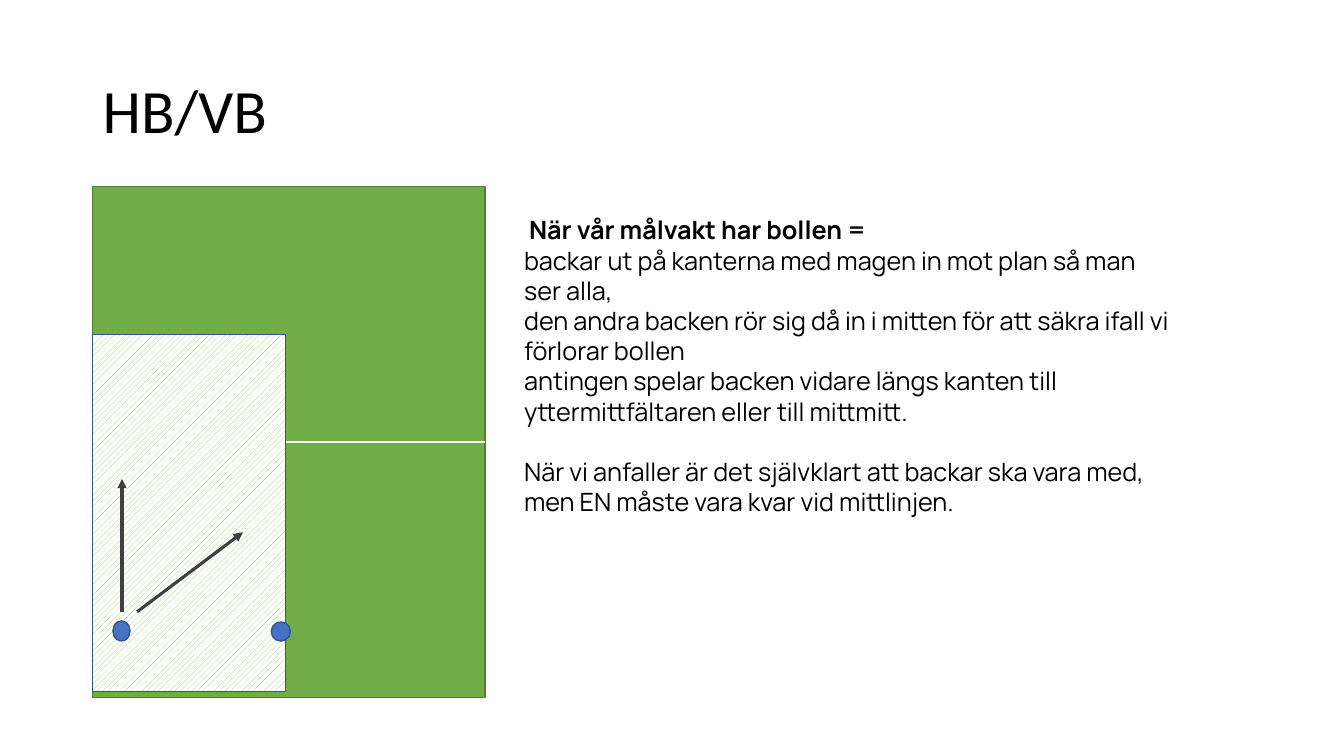
from dataclasses import dataclass

from lxml import etree
from pptx import Presentation
from pptx.dml.color import RGBColor
from pptx.enum import dml, shapes, text
from pptx.oxml import ns
from pptx.shapes.autoshape import Shape
from pptx.shapes.connector import Connector
from pptx.slide import Slide
from pptx.util import Inches, Pt


@dataclass(frozen=True)
class Theme:
    font_title: str = "Calibri"
    font_body: str = "Manrope"
    size_title: float = 44
    size_body: float = 18
    paragraph_gap: float = 21.6
    outline_width: float = 1
    halfway_width: float = 1.5
    arrow_width: float = 2.25
    ink: str = "000000"
    white: str = "FFFFFF"
    grass: str = "70AD47"
    grass_outline: str = "538035"
    hatch: str = "92D050"
    player: str = "4472C4"
    blue_outline: str = "325491"
    arrow: str = "404040"


@dataclass(frozen=True)
class Box:
    left: float
    top: float
    width: float
    height: float

    def lengths(self) -> tuple[Inches, Inches, Inches, Inches]:
        return Inches(self.left), Inches(self.top), Inches(self.width), Inches(self.height)


@dataclass(frozen=True)
class Run:
    start: tuple[float, float]
    end: tuple[float, float]


THEME = Theme()
RECTANGLE = shapes.MSO_SHAPE.RECTANGLE
OVAL = shapes.MSO_SHAPE.OVAL

TITLE_BOX = Box(0.92, 0.4, 11.5, 1.45)
BODY_BOX = Box(5.1, 2.08, 6.67, 3.43)
PITCH = Box(0.92, 1.85, 3.89, 5.07)
BACK_ZONE = Box(0.92, 3.32, 1.91, 3.54)
PLAYERS = [Box(1.12, 6.16, 0.17, 0.2), Box(2.69, 6.17, 0.19, 0.19)]
RUNS = [Run((1.21, 6.07), (1.21, 4.75)), Run((1.36, 6.07), (2.41, 5.28))]

HEADING = " När vår målvakt har bollen ="
INSTRUCTIONS = [
    "backar ut på kanterna med magen in mot plan så man ser alla,",
    "den andra backen rör sig då in i mitten för att säkra ifall vi förlorar bollen",
    "antingen spelar backen vidare längs kanten till yttermittfältaren eller till mittmitt.",
]
ATTACK = "När vi anfaller är det självklart att backar ska vara med, men EN måste vara kvar vid mittlinjen."


def color(value: str) -> RGBColor:
    return RGBColor.from_string(value)


def add_figure(slide: Slide, kind: shapes.MSO_SHAPE, box: Box, fill: str, outline: str) -> Shape:
    shape = slide.shapes.add_shape(kind, *box.lengths())
    shape.shadow.inherit = False
    shape.fill.solid()
    shape.fill.fore_color.rgb = color(fill)
    shape.line.color.rgb = color(outline)
    shape.line.width = Pt(THEME.outline_width)
    return shape


def add_hatched_zone(slide: Slide) -> None:
    zone = add_figure(slide, RECTANGLE, BACK_ZONE, THEME.white, THEME.blue_outline)
    zone.fill.patterned()
    zone.fill.pattern = dml.MSO_PATTERN.WIDE_UPWARD_DIAGONAL
    zone.fill.fore_color.rgb = color(THEME.hatch)
    zone.fill.back_color.rgb = color(THEME.white)


def add_line(slide: Slide, run: Run, stroke: str, width: float) -> Connector:
    points = [Inches(value) for value in (*run.start, *run.end)]
    connector = slide.shapes.add_connector(shapes.MSO_CONNECTOR.STRAIGHT, *points)
    connector.line.color.rgb = color(stroke)
    connector.line.width = Pt(width)
    etree.SubElement(connector._element.spPr, ns.qn("a:effectLst"))
    return connector


def add_halfway_line(slide: Slide, pitch: Shape) -> None:
    middle = PITCH.top + PITCH.height / 2
    run = Run((PITCH.left, middle), (PITCH.left + PITCH.width, middle))
    connector = add_line(slide, run, THEME.white, THEME.halfway_width)
    connector.begin_connect(pitch, 1)
    connector.end_connect(pitch, 3)


def add_arrow(slide: Slide, run: Run) -> None:
    connector = add_line(slide, run, THEME.arrow, THEME.arrow_width)
    etree.SubElement(connector.line._get_or_add_ln(), ns.qn("a:tailEnd"), type="triangle")


def add_text(slide: Slide, box: Box, lines: list[str], font: str, size: float) -> Shape:
    shape = slide.shapes.add_textbox(*box.lengths())
    frame = shape.text_frame
    frame.word_wrap = True
    frame.text = "\n".join(lines)
    for paragraph in frame.paragraphs:
        for run in paragraph.runs:
            run.font.name = font
            run.font.size = Pt(size)
            run.font.color.rgb = color(THEME.ink)
    return shape


def add_title(slide: Slide) -> None:
    frame = add_text(slide, TITLE_BOX, ["HB/VB"], THEME.font_title, THEME.size_title).text_frame
    frame.vertical_anchor = text.MSO_ANCHOR.MIDDLE
    frame.paragraphs[0].line_spacing = 0.9


def add_body(slide: Slide) -> None:
    lines = [HEADING, *INSTRUCTIONS, ATTACK]
    frame = add_text(slide, BODY_BOX, lines, THEME.font_body, THEME.size_body).text_frame
    frame.paragraphs[0].runs[0].font.bold = True
    frame.paragraphs[-1].space_before = Pt(THEME.paragraph_gap)


def main() -> None:
    presentation = Presentation()
    presentation.slide_width = Inches(13.33)
    presentation.slide_height = Inches(7.5)
    slide = presentation.slides.add_slide(presentation.slide_layouts[6])

    add_title(slide)
    pitch = add_figure(slide, RECTANGLE, PITCH, THEME.grass, THEME.grass_outline)
    add_halfway_line(slide, pitch)
    add_hatched_zone(slide)
    add_body(slide)
    for player in PLAYERS:
        add_figure(slide, OVAL, player, THEME.player, THEME.blue_outline)
    for run in RUNS:
        add_arrow(slide, run)

    presentation.save("out.pptx")


if __name__ == "__main__":
    main()
